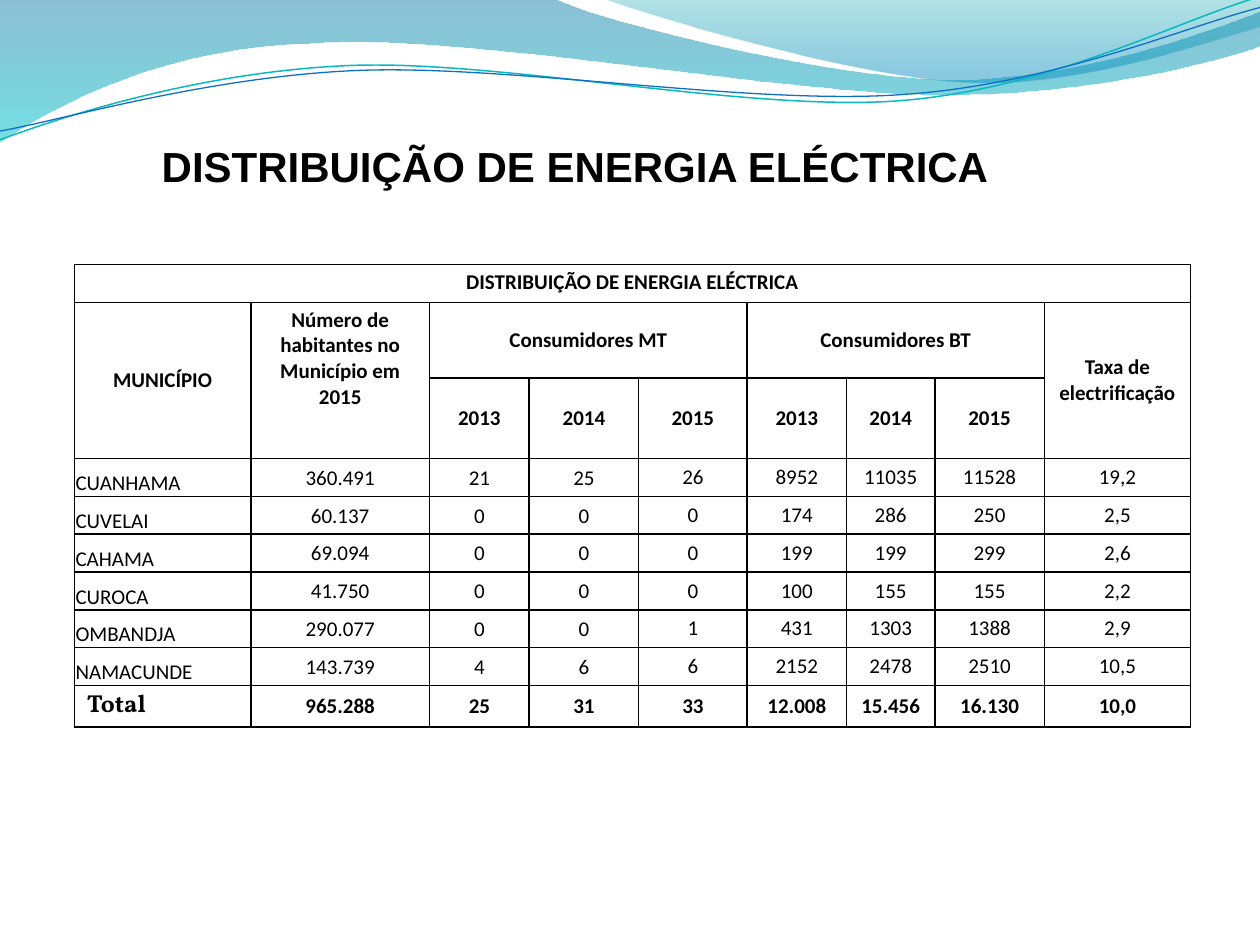
from math import cos, radians, sin

from lxml import etree
from pptx import Presentation
from pptx.dml.color import RGBColor
from pptx.enum.text import MSO_ANCHOR, MSO_AUTO_SIZE, PP_ALIGN
from pptx.oxml.ns import qn
from pptx.util import Inches, Pt

LEFT, CENTER = PP_ALIGN.LEFT, PP_ALIGN.CENTER
TOP, MIDDLE, BOTTOM = MSO_ANCHOR.TOP, MSO_ANCHOR.MIDDLE, MSO_ANCHOR.BOTTOM

BLACK = RGBColor(0x00, 0x00, 0x00)
DEEP_BLUE = RGBColor(0x00, 0x74, 0xA1)
AQUA = RGBColor(0x00, 0xC6, 0xCF)
TEAL = RGBColor(0x00, 0xA1, 0xA9)
SKY_BLUE = RGBColor(0x00, 0x8B, 0xBF)
LINE_TEAL = RGBColor(0x0A, 0xB8, 0xBF)
LINE_BLUE = RGBColor(0x0F, 0x6F, 0xC6)

TITLE = "DISTRIBUIÇÃO DE ENERGIA ELÉCTRICA"
CURVE_TILT = 357.3

BACK_WAVE = [
    (0, 0), (4.4, -0.01),
    (4.76, 0.17, 6.64, 0.63, 7.58, 0.63), (8.53, 0.63, 9.58, 0.26, 10, 0.09),
    (10.01, 0.36),
    (9.83, 0.44, 8.7, 0.76, 7.46, 0.75), (6.22, 0.75, 3.82, 0.28, 2.57, 0.34),
    (1.29, 0.36, 0.46, 0.83, -0.01, 1.13), (0, 0),
]
FRONT_WAVE = [
    (4.79, -0.01),
    (5.09, 0.11, 6.82, 0.62, 7.69, 0.65), (8.56, 0.69, 9.61, 0.32, 10, 0.21),
    (10, 0), (4.79, -0.01),
]
TEAL_CURVE = [
    (0, 1.11),
    (0.48, 0.93, 1.58, 0.57, 2.77, 0.52), (3.95, 0.47, 5.93, 0.89, 7.13, 0.8),
    (8.33, 0.71, 9.38, 0.15, 9.98, -0.02),
]
BLUE_CURVE = [
    (0, 1.04),
    (0.47, 0.96, 1.64, 0.61, 2.83, 0.56), (4.03, 0.51, 5.97, 0.84, 7.17, 0.75),
    (8.36, 0.67, 9.41, 0.21, 10, 0.06),
]

COL_WIDTHS = [1.4, 1.42, 0.79, 0.87, 0.86, 0.79, 0.7, 0.87, 1.16]
ROW_HEIGHTS = [0.3, 0.6, 0.64] + [0.3] * 6 + [0.33]
HEADERS = [
    (0, 0, 0, 8, TITLE),
    (1, 0, 2, 0, "MUNICÍPIO"),
    (1, 1, 2, 1, "Número de habitantes no Município em 2015"),
    (1, 2, 1, 4, "Consumidores MT"),
    (1, 5, 1, 7, "Consumidores BT"),
    (1, 8, 2, 8, "Taxa de electrificação"),
]
YEARS = ["2013", "2014", "2015"] * 2
MUNICIPALITIES = [
    ["CUANHAMA", "360.491", "21", "25", "26", "8952", "11035", "11528", "19,2"],
    ["CUVELAI", "60.137", "0", "0", "0", "174", "286", "250", "2,5"],
    ["CAHAMA", "69.094", "0", "0", "0", "199", "199", "299", "2,6"],
    ["CUROCA", "41.750", "0", "0", "0", "100", "155", "155", "2,2"],
    ["OMBANDJA", "290.077", "0", "0", "1", "431", "1303", "1388", "2,9"],
    ["NAMACUNDE", "143.739", "4", "6", "6", "2152", "2478", "2510", "10,5"],
]
TOTALS = ["Total", "965.288", "25", "31", "33", "12.008", "15.456", "16.130", "10,0"]


def turn(points, degrees, center):
    cx, cy = center
    c, k = cos(radians(degrees)), sin(radians(degrees))
    return [(cx + (x - cx) * c - (y - cy) * k, cy + (x - cx) * k + (y - cy) * c)
            for x, y in points]


def add_outline(s, steps, close, rotation=0, center=(0, 0)):
    points = [pair for step in steps for pair in zip(step[::2], step[1::2])]
    points = [(Inches(x), Inches(y)) for x, y in turn(points, -rotation, center)]
    builder = s.shapes.build_freeform(*points[0])
    builder.add_line_segments(points[1:], close=close)
    sp = builder.convert_to_shape()
    segments = iter(list(sp._element.iter(qn("a:lnTo"))))
    for step in steps[1:]:
        first = next(segments)
        if len(step) == 6:
            first.tag = qn("a:cubicBezTo")
            for extra in (next(segments), next(segments)):
                first.append(extra[0])
                extra.getparent().remove(extra)
    sp.rotation = rotation
    sp.shadow.inherit = False
    return sp


def add_wave(s, steps, stops):
    sp = add_outline(s, steps, True)
    sp.line.fill.background()
    sp.fill.gradient()
    sp.fill.gradient_angle = 270
    for stop, (position, color, opacity) in zip(sp.fill.gradient_stops, stops):
        stop.position = position
        stop.color.rgb = color
    colors = sp._element.spPr.iter(qn("a:srgbClr"))
    for clr, (position, color, opacity) in zip(colors, stops):
        etree.SubElement(clr, qn("a:alpha"), val=str(opacity * 1000))


def add_curve(s, steps, center, color, width):
    sp = add_outline(s, steps, False, CURVE_TILT, center)
    sp.fill.background()
    sp.line.color.rgb = color
    sp.line.width = Pt(width)


def set_text(tf, text, size, font, bold, align):
    tf.text = text
    p = tf.paragraphs[0]
    p.alignment = align
    r = p.runs[0]
    r.font.size = Pt(size)
    r.font.name = font
    r.font.bold = bold
    r.font.color.rgb = BLACK


def add_title(s):
    sp = s.shapes.add_textbox(Inches(0.98), Inches(1.07), Inches(7.17), Inches(0.5))
    tf = sp.text_frame
    tf.word_wrap = True
    tf.auto_size = MSO_AUTO_SIZE.SHAPE_TO_FIT_TEXT
    set_text(tf, TITLE, 24, "Arial", True, CENTER)


def set_borders(cell):
    tcPr = cell._tc.get_or_add_tcPr()
    for side in ("a:lnL", "a:lnR", "a:lnT", "a:lnB"):
        ln = etree.SubElement(tcPr, qn(side), w=str(Pt(1)))
        fill = etree.SubElement(ln, qn("a:solidFill"))
        etree.SubElement(fill, qn("a:srgbClr"), val=str(BLACK))


def set_cell(cell, text, bold=True, align=CENTER, anchor=MIDDLE, size=12, font="Calibri"):
    set_text(cell.text_frame, text, size, font, bold, align)
    cell.vertical_anchor = anchor


def set_vertical_margins(cell, inches):
    cell.margin_top = cell.margin_bottom = Inches(inches)


def tighten(cell):
    cell.margin_left = cell.margin_right = cell.margin_top = Inches(0.01)
    cell.margin_bottom = 0


def add_energy_table(s):
    frame = s.shapes.add_table(len(ROW_HEIGHTS), len(COL_WIDTHS), Inches(0.59), Inches(2.1),
                               Inches(sum(COL_WIDTHS)), Inches(sum(ROW_HEIGHTS)))
    table = frame.table
    table.first_row = table.horz_banding = False
    for column, width in zip(table.columns, COL_WIDTHS):
        column.width = Inches(width)
    for row, height in zip(table.rows, ROW_HEIGHTS):
        row.height = Inches(height)
    for cell in table.iter_cells():
        set_borders(cell)
        cell.fill.background()
        set_vertical_margins(cell, 0.04)

    for top, left, bottom, right, text in HEADERS:
        cell = table.cell(top, left)
        cell.merge(table.cell(bottom, right))
        set_cell(cell, text, anchor=TOP if text == TITLE or left == 1 else MIDDLE)
    for col, year in enumerate(YEARS, 2):
        set_cell(table.cell(2, col), year)
    for row, values in enumerate(MUNICIPALITIES, 3):
        for col, value in enumerate(values):
            cell = table.cell(row, col)
            if col == 0:
                set_cell(cell, value, False, LEFT, BOTTOM)
            else:
                set_cell(cell, value, False)
            if col < 4:
                tighten(cell)
    last = len(ROW_HEIGHTS) - 1
    total = table.cell(last, 0)
    set_cell(total, TOTALS[0], True, LEFT, TOP, 14, "Vollkorn")
    set_vertical_margins(total, 0.03)
    for col, value in enumerate(TOTALS[1:], 1):
        set_cell(table.cell(last, col), value)


def main():
    prs = Presentation()
    prs.slide_width, prs.slide_height = Inches(10), Inches(7.5)
    s = prs.slides.add_slide(prs.slide_layouts[6])
    add_wave(s, BACK_WAVE, [(0, DEEP_BLUE, 45), (1, AQUA, 55)])
    add_wave(s, FRONT_WAVE, [(0, TEAL, 30), (0.8, SKY_BLUE, 45)])
    add_curve(s, TEAL_CURVE, (4.99, 0.57), LINE_TEAL, 0.85)
    add_curve(s, BLUE_CURVE, (5, 0.59), LINE_BLUE, 0.75)
    add_energy_table(s)
    add_title(s)
    prs.save("out.pptx")


if __name__ == "__main__":
    main()
